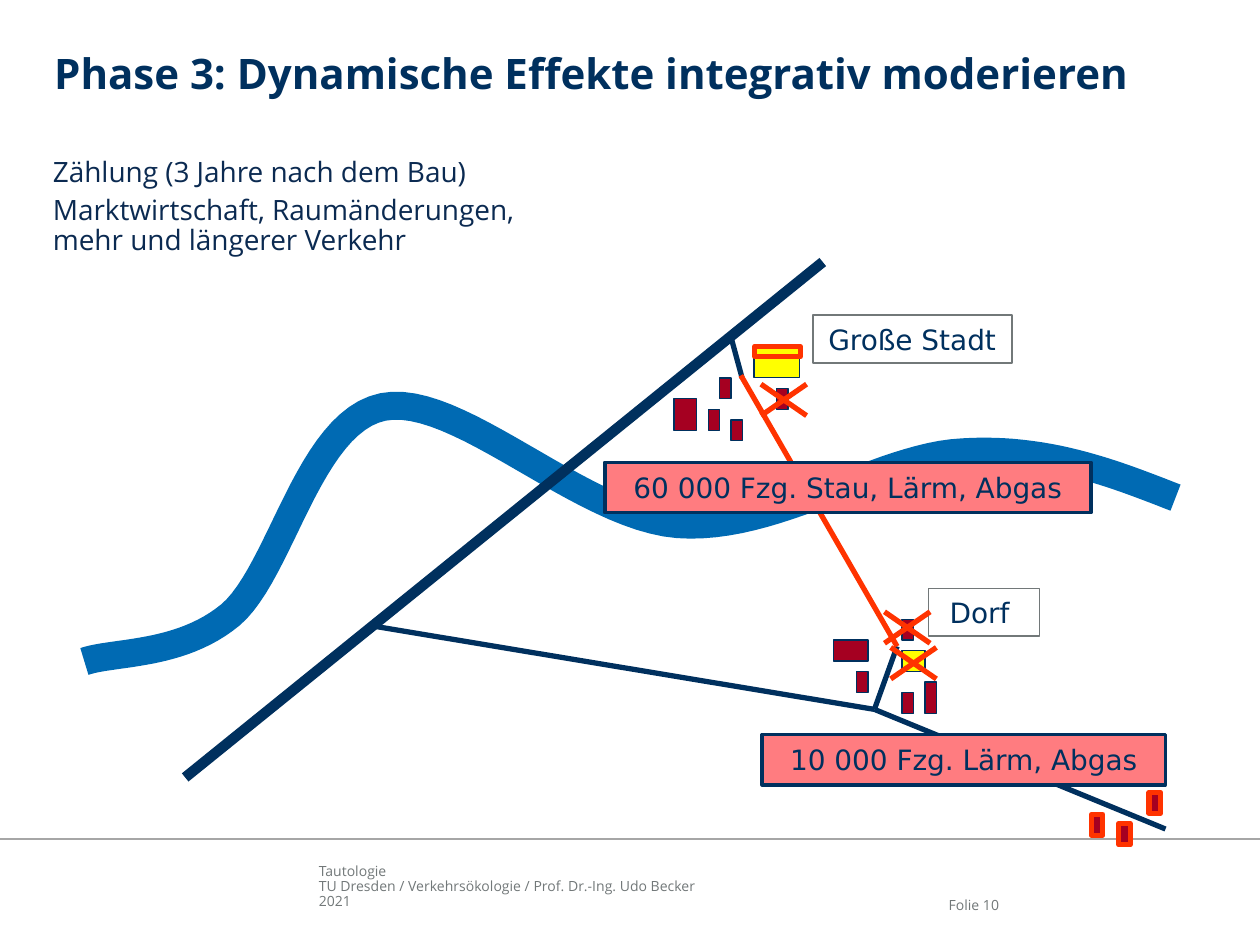
from typing import NamedTuple, Optional

import pptx
import pptx.dml.color
import pptx.enum.shapes
import pptx.enum.text
import pptx.oxml.ns
import pptx.util
from lxml import etree

RGBColor = pptx.dml.color.RGBColor
Pt = pptx.util.Pt
Align = pptx.enum.text.PP_ALIGN
Anchor = pptx.enum.text.MSO_ANCHOR

NAVY = RGBColor(0x00, 0x30, 0x5E)
INK = RGBColor(0x0B, 0x2A, 0x51)
GREY = RGBColor(0x72, 0x78, 0x79)
RULE_GREY = RGBColor(0xA6, 0xA6, 0xA6)
RIVER_BLUE = RGBColor(0x00, 0x6A, 0xB3)
YELLOW = RGBColor(0xFF, 0xFF, 0x00)
BRICK = RGBColor(0xA5, 0x00, 0x21)
ORANGE = RGBColor(0xFF, 0x33, 0x00)
PINK = RGBColor(0xFF, 0x7C, 0x80)

SLIDE_WIDTH = pptx.util.Inches(10)
SLIDE_HEIGHT = pptx.util.Inches(7.5)

# Building grid, in percent of the slide: origin and cell size
GRID_LEFT, GRID_TOP = 53.5, 33.33
COLUMN, ROW = 0.905, 1.11
CURVE_STEPS = 24


class Box(NamedTuple):
    """A rectangle in percent of the slide's width and height."""
    left: float
    top: float
    width: float
    height: float


class Style(NamedTuple):
    font: str
    size: int
    color: RGBColor
    bold: bool = False
    align: Align = Align.LEFT
    anchor: Anchor = Anchor.TOP
    spacing: float = 0.9
    space_before: int = 0


class Building(NamedTuple):
    """A building in grid columns and rows."""
    column: float
    row: float
    columns: float = 1
    rows: float = 2
    fill: RGBColor = BRICK
    line: RGBColor = NAVY
    weight: float = 0.75


class Road(NamedTuple):
    """A straight line between two points in percent of the slide."""
    start: tuple[float, float]
    end: tuple[float, float]
    color: RGBColor = NAVY
    weight: float = 3


class Label(NamedTuple):
    text: str
    box: Box
    fill: Optional[RGBColor]
    line: RGBColor
    weight: float


TITLE = Style("Open Sans", 24, NAVY, bold=True, anchor=Anchor.MIDDLE)
BODY = Style("Open Sans", 16, INK, space_before=4)
FOOTER = Style("Open Sans", 8, GREY)
PAGE = FOOTER._replace(align=Align.RIGHT)
LABEL = Style("DejaVu Sans", 16, NAVY, align=Align.CENTER,
              anchor=Anchor.MIDDLE, spacing=1.0)

TEXTS = [
    (Box(25.3, 91.47, 45.2, 5.33), FOOTER,
     ["Tautologie", "TU Dresden / Verkehrsökologie / Prof. Dr.-Ing. Udo Becker", "2021"]),
    (Box(71.7, 91.47, 7.6, 5.33), PAGE, ["\nFolie 10"]),
    (Box(4.3, 4.93, 91.5, 6.27), TITLE,
     ["Phase 3: Dynamische Effekte integrativ moderieren"]),
    (Box(4.2, 16.8, 91.6, 66.8), BODY,
     ["Zählung (3 Jahre nach dem Bau)",
      "Marktwirtschaft, Raumänderungen,\nmehr und längerer Verkehr"]),
]

# Start point, then two control points and an end point for each bend
RIVER_START = (93.3, 52.67)
RIVER_BENDS = [
    ((88.2, 50), (83, 47.33), (76.4, 47.87)),
    ((69.8, 48.27), (61.5, 56.27), (53.8, 55.47)),
    ((46.1, 54.67), (36.3, 41.47), (30.4, 43.07)),
    ((24.5, 44.67), (22.3, 60.53), (18.3, 65.07)),
    ((14.3, 69.47), (9.1, 68.93), (6.7, 70)),
]

CITY_GATE, VILLAGE_GATE, JUNCTION = (58.8, 39.73), (71.2, 68.4), (69.4, 75.07)
FOOTER_RULE = Road((0, 88.8), (100, 88.8), RULE_GREY, 1)
ROADS = [
    Road((14.7, 82.27), (65.3, 27.73), weight=6),
    Road((58.9, 40), (58, 35.6)),
    Road(JUNCTION, VILLAGE_GATE),
    Road(JUNCTION, (29.7, 66.27)),
    Road(JUNCTION, (92.5, 87.73)),
    Road(CITY_GATE, VILLAGE_GATE, ORANGE),
]

CITY = [Building(7, 3, 4, 3, YELLOW), Building(0, 8, 2, 3), Building(5, 10),
        Building(9, 7), Building(4, 6), Building(3, 9)]
VILLAGE = [Building(20, 32, 2, 2, YELLOW), Building(20, 36), Building(20, 29),
           Building(14, 31, 3), Building(22, 35, 1, 3), Building(16, 34)]
NEW_BUILDINGS = [
    Building(column, row, columns, rows, fill, ORANGE, 3)
    for column, row, columns, rows, fill in [
        (7.07, 3, 4, 1, YELLOW), (41.66, 45.5, 1, 2, BRICK),
        (39, 48.5, 1, 2, BRICK), (36.6, 47.6, 1, 2, BRICK)]
]
CROSSES = [(7.62, 6.6), (18.45, 28.3), (19, 31.7)]
CROSS_COLUMNS, CROSS_ROWS = 4, 3

LABELS = [
    Label("Dorf ", Box(73.7, 62.27, 8.8, 5.07), None, GREY, 1),
    Label("Große Stadt", Box(64.5, 33.33, 15.8, 5.07), None, GREY, 1),
    Label("60 000 Fzg. Stau, Lärm, Abgas", Box(48, 48.93, 38.6, 5.33), PINK, NAVY, 2),
    Label("10 000 Fzg. Lärm, Abgas", Box(60.5, 77.73, 32, 5.33), PINK, NAVY, 2),
]


def across(percent: float) -> int:
    return round(SLIDE_WIDTH * percent / 100)


def down(percent: float) -> int:
    return round(SLIDE_HEIGHT * percent / 100)


def place(box: Box) -> tuple[int, int, int, int]:
    return across(box.left), down(box.top), across(box.width), down(box.height)


def grid_point(column: float, row: float) -> tuple[float, float]:
    return GRID_LEFT + column * COLUMN, GRID_TOP + row * ROW


def write(frame, paragraphs: list[str], style: Style) -> None:
    frame.word_wrap = True
    frame.vertical_anchor = style.anchor
    for index, text in enumerate(paragraphs):
        paragraph = frame.add_paragraph() if index else frame.paragraphs[0]
        paragraph.alignment = style.align
        paragraph.line_spacing = style.spacing
        if index:
            paragraph.space_before = Pt(style.space_before)
        for number, line in enumerate(text.split("\n")):
            if number:
                paragraph.add_line_break()
            run = paragraph.add_run()
            run.text = line
            run.font.name, run.font.size = style.font, Pt(style.size)
            run.font.bold = style.bold
            run.font.color.rgb = style.color


def draw_text(slide, box: Box, style: Style, paragraphs: list[str]) -> None:
    frame = slide.shapes.add_textbox(*place(box)).text_frame
    frame.margin_left = frame.margin_right = frame.margin_top = frame.margin_bottom = 0
    write(frame, paragraphs, style)


def finish(shape, fill: Optional[RGBColor], line: RGBColor, weight: float) -> None:
    shape.shadow.inherit = False
    if fill is None:
        shape.fill.background()
    else:
        shape.fill.solid()
        shape.fill.fore_color.rgb = fill
    shape.line.color.rgb = line
    shape.line.width = Pt(weight)


def draw_rectangle(slide, box: Box, fill: Optional[RGBColor], line: RGBColor, weight: float):
    shape = slide.shapes.add_shape(pptx.enum.shapes.MSO_SHAPE.RECTANGLE, *place(box))
    finish(shape, fill, line, weight)
    return shape


def draw_building(slide, building: Building) -> None:
    box = Box(*grid_point(building.column, building.row),
              building.columns * COLUMN, building.rows * ROW)
    draw_rectangle(slide, box, building.fill, building.line, building.weight)


def draw_label(slide, label: Label) -> None:
    shape = draw_rectangle(slide, label.box, label.fill, label.line, label.weight)
    write(shape.text_frame, [label.text], LABEL)


def draw_road(slide, road: Road) -> None:
    connector = slide.shapes.add_connector(
        pptx.enum.shapes.MSO_CONNECTOR.STRAIGHT,
        across(road.start[0]), down(road.start[1]), across(road.end[0]), down(road.end[1]))
    connector.line.color.rgb = road.color
    connector.line.width = Pt(road.weight)
    etree.SubElement(connector._element.spPr, pptx.oxml.ns.qn("a:effectLst"))


def draw_cross(slide, column: float, row: float) -> None:
    left, top = grid_point(column, row)
    right, bottom = grid_point(column + CROSS_COLUMNS, row + CROSS_ROWS)
    draw_road(slide, Road((right, top), (left, bottom), ORANGE))
    draw_road(slide, Road((left, top), (right, bottom), ORANGE))


def draw_river(slide) -> None:
    points, start = [], RIVER_START
    for first, second, end in RIVER_BENDS:
        for step in range(1, CURVE_STEPS + 1):
            t = step / CURVE_STEPS
            x, y = ((1 - t) ** 3 * a + 3 * (1 - t) ** 2 * t * b + 3 * (1 - t) * t ** 2 * c + t ** 3 * d
                    for a, b, c, d in zip(start, first, second, end))
            points.append((across(x), down(y)))
        start = end
    builder = slide.shapes.build_freeform(across(RIVER_START[0]), down(RIVER_START[1]))
    builder.add_line_segments(points, close=False)
    finish(builder.convert_to_shape(), None, RIVER_BLUE, 16)


def main() -> None:
    presentation = pptx.Presentation()
    presentation.slide_width, presentation.slide_height = SLIDE_WIDTH, SLIDE_HEIGHT
    slide = presentation.slides.add_slide(presentation.slide_layouts[6])

    # Footer rule and texts
    draw_road(slide, FOOTER_RULE)
    for box, style, paragraphs in TEXTS:
        draw_text(slide, box, style, paragraphs)

    # Map
    draw_river(slide)
    for building in CITY + VILLAGE:
        draw_building(slide, building)
    for road in ROADS:
        draw_road(slide, road)
    for label in LABELS:
        draw_label(slide, label)

    # Changes after three years
    for building in NEW_BUILDINGS:
        draw_building(slide, building)
    for column, row in CROSSES:
        draw_cross(slide, column, row)

    presentation.save("out.pptx")


if __name__ == "__main__":
    main()
